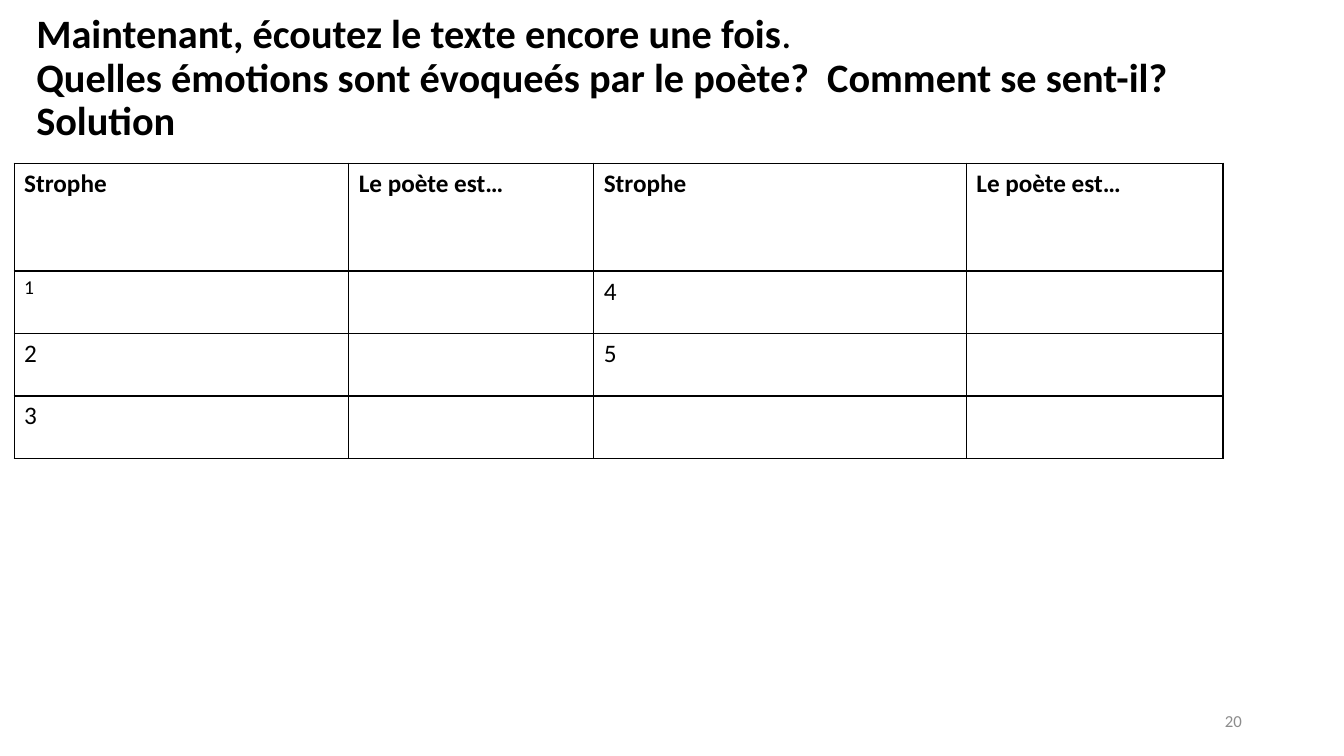
from lxml.etree import SubElement
from pptx import Presentation
from pptx.dml.color import RGBColor
from pptx.enum.text import MSO_ANCHOR as Anchor, MSO_AUTO_SIZE as AutoSize, PP_ALIGN as Align
from pptx.oxml.ns import qn
from pptx.util import Pt

FONT = "Calibri"
BLACK, GREY = "000000", "8C8C8C"
TITLE_SIZE, TABLE_SIZE, SMALL_SIZE, NUMBER_SIZE = 28.8, 18, 14, 12

TITLE_LINES = [
    [("Maintenant, écoutez le texte encore une fois", True), (".", False)],
    [("Quelles émotions sont évoqueés par le poète?  Comment se sent-il?  Solution", True)],
]
STANZAS = [
    ["Strophe", "Le poète est…", "Strophe", "Le poète est…"],
    ["1", "", "4", ""],
    ["2", "", "5", ""],
    ["3", "", "", ""],
]
PAGE_NUMBER = "20"

# Left, top, width, height in points
TITLE_AREA = (18.72, 33.12, 907.2, 46.8)
TABLE_CORNER = (10.08, 116.64)
COLUMN_WIDTHS = [239, 175, 266.2, 183.4]
ROW_HEIGHTS = [77, 44.6, 44.6, 44.6]
NUMBER_AREA = (678.24, 500.4, 216, 28.8)


def color(value):
    return RGBColor.from_string(value)


def style(span, size, bold=False, shade=BLACK):
    span.font.name = FONT
    span.font.size = Pt(size)
    span.font.bold = bold
    span.font.color.rgb = color(shade)


def add_borders(cell):
    properties = cell._tc.get_or_add_tcPr()
    for side in ("a:lnL", "a:lnR", "a:lnT", "a:lnB"):
        line = SubElement(properties, qn(side), w=str(Pt(1)))
        fill = SubElement(line, qn("a:solidFill"))
        SubElement(fill, qn("a:srgbClr"), val=BLACK)


def add_title(page):
    box = page.shapes.title
    box.left, box.top, box.width, box.height = map(Pt, TITLE_AREA)
    frame = box.text_frame
    frame.word_wrap = True
    frame.auto_size = AutoSize.NONE
    frame.vertical_anchor = Anchor.MIDDLE
    para = frame.paragraphs[0]
    para.alignment = Align.LEFT
    para.line_spacing = 0.9
    for index, pieces in enumerate(TITLE_LINES):
        if index:
            para.add_line_break()
        for text, bold in pieces:
            span = para.add_run()
            span.text = text
            style(span, TITLE_SIZE, bold)


def add_stanza_table(page):
    size = Pt(sum(COLUMN_WIDTHS)), Pt(sum(ROW_HEIGHTS))
    table = page.shapes.add_table(
        len(STANZAS), len(COLUMN_WIDTHS), *map(Pt, TABLE_CORNER), *size).table
    table.first_row = table.horz_banding = False
    for column, width in zip(table.columns, COLUMN_WIDTHS):
        column.width = Pt(width)
    for row, height in zip(table.rows, ROW_HEIGHTS):
        row.height = Pt(height)
    for row_index, texts in enumerate(STANZAS):
        for column_index, text in enumerate(texts):
            cell = table.cell(row_index, column_index)
            add_borders(cell)
            cell.fill.background()
            if text:
                cell.text_frame.text = text
                text_size = SMALL_SIZE if text == "1" else TABLE_SIZE
                style(cell.text_frame.paragraphs[0].runs[0], text_size, row_index == 0)


def add_page_number(page):
    frame = page.shapes.add_textbox(*map(Pt, NUMBER_AREA)).text_frame
    frame.word_wrap = True
    frame.vertical_anchor = Anchor.MIDDLE
    frame.text = PAGE_NUMBER
    para = frame.paragraphs[0]
    para.alignment = Align.RIGHT
    style(para.runs[0], NUMBER_SIZE, shade=GREY)


def main():
    deck = Presentation()
    deck.slide_width, deck.slide_height = Pt(960), Pt(540)
    page = deck.slides.add_slide(deck.slide_layouts[5])
    add_title(page)
    add_stanza_table(page)
    add_page_number(page)
    deck.save("out.pptx")


if __name__ == "__main__":
    main()
